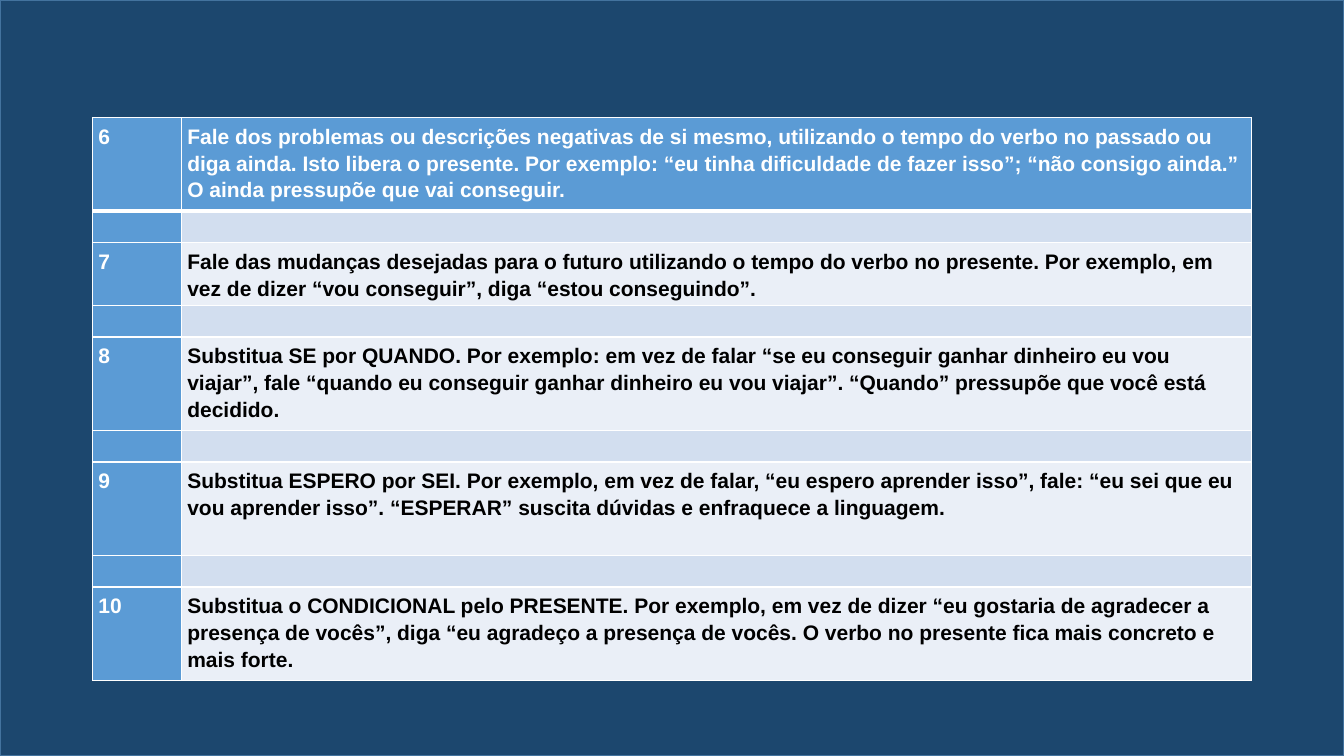
from lxml.etree import SubElement as Sub
from pptx import Presentation
from pptx.dml.color import RGBColor
from pptx.enum.shapes import MSO_SHAPE as Shape
from pptx.oxml.ns import qn
from pptx.util import Cm, Pt

NAVY, EDGE, BLUE = "1C476E", "43739E", "5B9BD5"
BAND, PALE, WHITE, BLACK = "D2DEEF", "EAEFF7", "FFFFFF", "000000"
GAP = 0.8  # height of the empty rows, in cm

# number, advice, row height in cm
TIPS = [
    ("6", "Fale dos problemas ou descrições negativas de si mesmo, utilizando o "
     "tempo do verbo no passado ou diga ainda. Isto libera o presente. Por exemplo: "
     "“eu tinha dificuldade de fazer isso”; “não consigo ainda.” O ainda pressupõe "
     "que vai conseguir.", 2.35),
    ("7", "Fale das mudanças desejadas para o futuro utilizando o tempo do verbo no "
     "presente. Por exemplo, em vez de dizer “vou conseguir”, diga “estou "
     "conseguindo”.", 1.57),
    ("8", "Substitua SE por QUANDO. Por exemplo: em vez de falar “se eu conseguir "
     "ganhar dinheiro eu vou viajar”, fale “quando eu conseguir ganhar dinheiro eu "
     "vou viajar”. “Quando” pressupõe que você está decidido.", 2.35),
    ("9", "Substitua ESPERO por SEI. Por exemplo, em vez de falar, “eu espero aprender "
     "isso”, fale: “eu sei que eu vou aprender isso”. “ESPERAR” suscita dúvidas e "
     "enfraquece a linguagem.", 2.35),
    ("10", "Substitua o CONDICIONAL pelo PRESENTE. Por exemplo, em vez de dizer “eu "
     "gostaria de agradecer a presença de vocês”, diga “eu agradeço a presença de "
     "vocês. O verbo no presente fica mais concreto e mais forte.", 2.35),
]


def color(code):
    return RGBColor.from_string(code)


def add_back(slide, width, height):
    back = slide.shapes.add_shape(Shape.RECTANGLE, 0, 0, width, height)
    back.shadow.inherit = False
    back.fill.solid()
    back.fill.fore_color.rgb = color(NAVY)
    back.line.color.rgb = color(EDGE)
    back.line.width = Pt(1)


def set_edges(cell, top, bottom):
    """Draw white borders; top and bottom are widths in points."""
    props = cell._tc.get_or_add_tcPr()
    for side, width in (("L", 1), ("R", 1), ("T", top), ("B", bottom)):
        line = Sub(props, qn(f"a:ln{side}"), w=str(Pt(width)))
        Sub(Sub(line, qn("a:solidFill")), qn("a:srgbClr"), val=WHITE)


def set_cell(cell, text, fill, ink):
    cell.fill.solid()
    cell.fill.fore_color.rgb = color(fill)
    cell.margin_left = cell.margin_right = Cm(0.15)
    cell.margin_top = cell.margin_bottom = Cm(0.1)
    cell.text = text
    para = cell.text_frame.paragraphs[0]
    para.line_spacing = 1.15
    font = para.font
    font.name, font.bold = "Arial", True
    font.size = Pt(15 if text else 10)
    font.color.rgb = color(ink)


def add_tips(slide):
    rows = []
    for tip in TIPS:
        rows += [tip, ("", "", GAP)]
    rows.pop()
    total = sum(row[2] for row in rows)
    table = slide.shapes.add_table(
        len(rows), 2, Cm(2.33), Cm(2.97), Cm(29.2), Cm(total)).table
    table.horz_banding = False
    table.columns[0].width, table.columns[1].width = Cm(2.24), Cm(26.96)
    for i, (number, advice, height) in enumerate(rows):
        table.rows[i].height = Cm(height)
        fill = BLUE if i == 0 else BAND if i % 2 else PALE
        ink = BLACK if i else WHITE
        cells = ((number, BLUE, WHITE), (advice, fill, ink))
        for j, look in enumerate(cells):
            cell = table.cell(i, j)
            set_edges(cell, 3 if i == 1 else 1, 3 if i == 0 else 1)
            set_cell(cell, *look)


def main():
    deck = Presentation()
    deck.slide_width, deck.slide_height = Cm(33.87), Cm(19.05)
    slide = deck.slides.add_slide(deck.slide_layouts[6])
    add_back(slide, deck.slide_width, deck.slide_height)
    add_tips(slide)
    deck.save("out.pptx")


if __name__ == "__main__":
    main()
